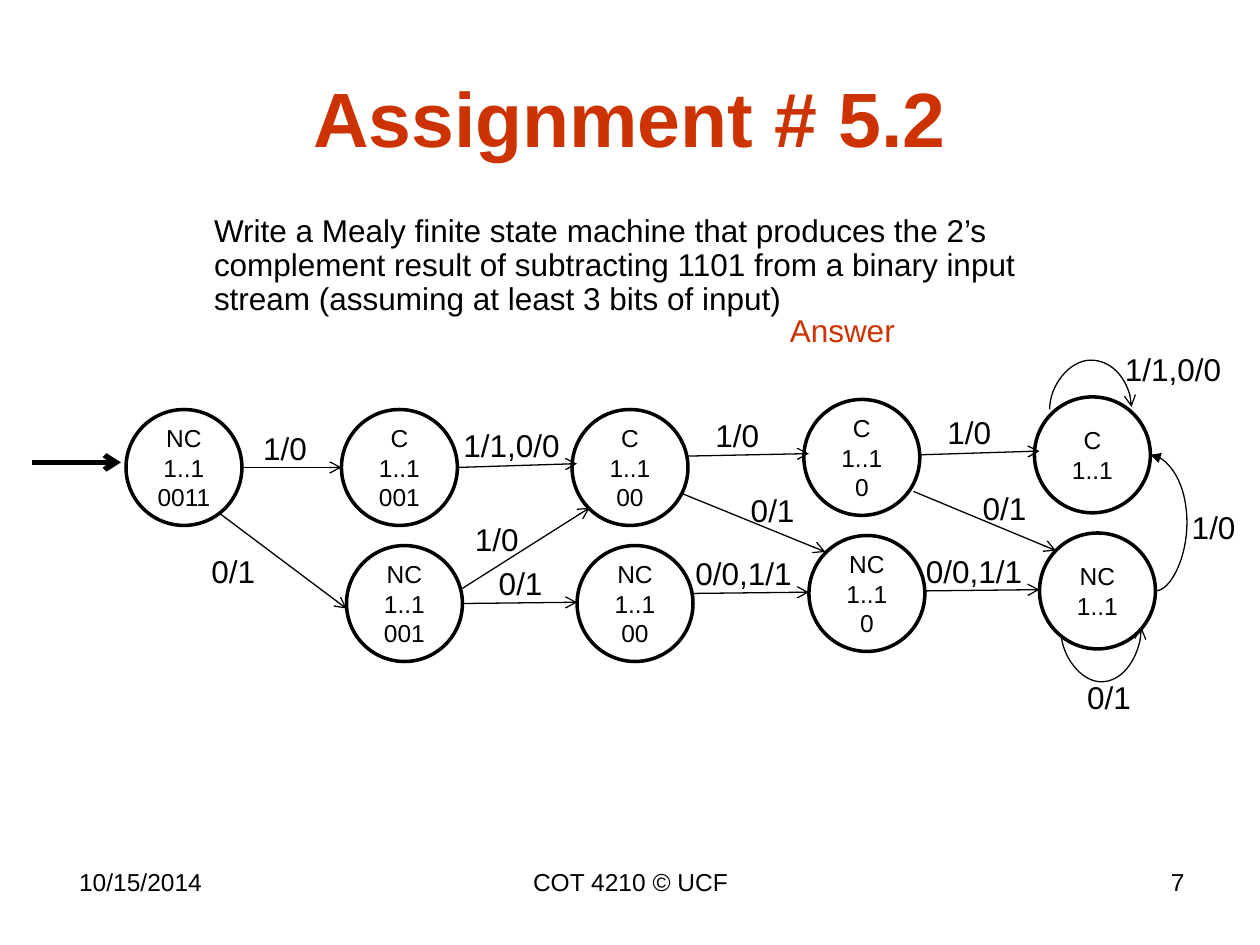
from dataclasses import dataclass

from lxml.etree import SubElement
from pptx import Presentation
from pptx.dml.color import RGBColor
from pptx.enum.shapes import MSO_CONNECTOR, MSO_SHAPE
from pptx.enum.text import MSO_ANCHOR, PP_ALIGN
from pptx.oxml.ns import qn
from pptx.util import Inches, Pt


@dataclass(frozen=True)
class Theme:
    font: str = "Arial"
    ink: RGBColor = RGBColor(0x00, 0x00, 0x00)
    accent: RGBColor = RGBColor(0xCC, 0x33, 0x00)
    paper: RGBColor = RGBColor(0xFF, 0xFF, 0xFF)
    title: int = 44
    body: int = 18
    small: int = 14


THEME = Theme()
NODE_SIZE = 0.92
LABEL_HEIGHT = 0.4

# Content: text boxes as (text, box, format)
TEXTS = [
    ("Assignment # 5.2", (0.5, 0.3, 9, 1.25),
     dict(size=THEME.title, color=THEME.accent, bold=True,
          align=PP_ALIGN.CENTER, anchor=MSO_ANCHOR.MIDDLE)),
    ("10/15/2014", (0.53, 6.83, 2.33, 0.52), dict(size=THEME.small)),
    ("COT 4210 © UCF", (3.42, 6.83, 3.17, 0.52),
     dict(size=THEME.small, align=PP_ALIGN.CENTER)),
    ("7", (7.17, 6.83, 2.33, 0.52),
     dict(size=THEME.small, align=PP_ALIGN.RIGHT)),
    ("Write a Mealy finite state machine that produces the 2’s complement "
     "result of subtracting 1101 from a binary input stream "
     "(assuming at least 3 bits of input)",
     (1.6, 1.66, 6.88, 1.22), dict(line_spacing=0.9)),
    ("Answer", (6.17, 2.42, 1.04, LABEL_HEIGHT),
     dict(color=THEME.accent, wrap=False)),
]

# States: (carry, remaining bits, left, top)
STATES = [
    ("NC", "0011", 1, 3.25),
    ("C", "001", 2.71, 3.25), ("NC", "001", 2.75, 4.33),
    ("C", "00", 4.54, 3.25), ("NC", "00", 4.58, 4.33),
    ("C", "0", 6.38, 3.17), ("NC", "0", 6.42, 4.25),
    ("C", "", 8.21, 3.15), ("NC", "", 8.25, 4.23),
]

# Straight transitions: (start, end)
TRANSITIONS = [
    ((1.92, 3.71), (2.71, 3.71)), ((1.75, 4.08), (2.75, 4.83)),
    ((3.67, 4.67), (4.68, 4.03)), ((3.63, 3.71), (4.58, 3.68)),
    ((3.67, 4.79), (4.58, 4.78)), ((5.42, 3.92), (6.55, 4.38)),
    ((5.46, 3.62), (6.42, 3.6)), ((5.5, 4.71), (6.42, 4.7)),
    ((7.25, 3.9), (8.38, 4.37)), ((7.29, 3.61), (8.25, 3.58)),
    ((7.33, 4.69), (8.25, 4.68)),
]
ENTRY = ((0.25, 3.67), (0.96, 3.67))

# Self loops: (start, end, height above the start)
LOOPS = [
    ((8.42, 5), (9.06, 4.98), -0.41),
    ((8.33, 3.25), (8.98, 3.23), 0.39),
]
RETURN_CURVE = ((9.17, 4.69), (9.13, 3.61), -0.25)

# Transition labels: (text, left, top, width)
LABELS = [
    ("1/0", 1.99, 3.36, 0.55), ("0/1", 1.58, 4.33, 0.55),
    ("1/0", 3.67, 4.08, 0.55), ("1/1,0/0", 3.58, 3.33, 1),
    ("0/1", 3.86, 4.43, 0.55), ("0/1", 5.86, 3.85, 0.55),
    ("1/0", 5.58, 3.25, 0.58), ("0/0,1/1", 5.42, 4.35, 0.97),
    ("0/1", 7.7, 3.83, 0.55), ("1/0", 7.42, 3.23, 0.58),
    ("0/0,1/1", 7.25, 4.33, 0.97), ("1/1,0/0", 8.83, 2.73, 1),
    ("0/1", 8.53, 5.33, 0.55), ("1/0", 9.36, 3.98, 0.55),
]


def write_text(shape, text, *, size=THEME.body, color=THEME.ink, bold=False,
               align=PP_ALIGN.LEFT, anchor=MSO_ANCHOR.TOP, wrap=True,
               line_spacing=None):
    frame = shape.text_frame
    frame.word_wrap = wrap
    frame.vertical_anchor = anchor
    frame.text = text
    for paragraph in frame.paragraphs:
        paragraph.alignment = align
        if line_spacing:
            paragraph.line_spacing = line_spacing
        for run in paragraph.runs:
            run.font.name = THEME.font
            run.font.size = Pt(size)
            run.font.bold = bold
            run.font.color.rgb = color


def add_text(slide, text, box, **text_format):
    shape = slide.shapes.add_textbox(*map(Inches, box))
    write_text(shape, text, **text_format)


def add_state(slide, carry, bits, left, top):
    shape = slide.shapes.add_shape(
        MSO_SHAPE.OVAL, *map(Inches, (left, top, NODE_SIZE, NODE_SIZE)))
    shape.shadow.inherit = False
    shape.fill.solid()
    shape.fill.fore_color.rgb = THEME.paper
    shape.line.color.rgb = THEME.ink
    shape.line.width = Pt(2)
    text = f"{carry}\v1..1" + (f"\n{bits}" if bits else "")
    write_text(shape, text, size=THEME.small, align=PP_ALIGN.CENTER,
               anchor=MSO_ANCHOR.MIDDLE, wrap=False)


def add_arrow(slide, start, end, *, kind=MSO_CONNECTOR.STRAIGHT, width=0.75,
              head="arrow"):
    connector = slide.shapes.add_connector(kind, *map(Inches, (*start, *end)))
    connector.line.color.rgb = THEME.ink
    connector.line.width = Pt(width)
    SubElement(connector.line._get_or_add_ln(), qn("a:tailEnd"), type=head)
    SubElement(connector._element.spPr, qn("a:effectLst"))
    return connector


def add_curve(slide, start, end, bulge, *, head="arrow"):
    """Draw a curve whose middle lies bulge inches along its own axis."""
    connector = add_arrow(slide, start, end, kind=MSO_CONNECTOR.CURVE, head=head)
    ratio = bulge / abs(start[0] - end[0])
    adjustments = connector._element.spPr.find(qn("a:prstGeom")).find(qn("a:avLst"))
    SubElement(adjustments, qn("a:gd"), name="adj1",
               fmla=f"val {round(ratio * 100000)}")
    return connector


def add_loop(slide, start, end, bulge):
    """Draw the curve on its side, then turn it a quarter about its centre."""
    center_x, center_y = (start[0] + end[0]) / 2, (start[1] + end[1]) / 2
    half_width, half_height = (start[1] - end[1]) / 2, (end[0] - start[0]) / 2
    connector = add_curve(
        slide, (center_x + half_width, center_y + half_height),
        (center_x - half_width, center_y - half_height), bulge)
    connector._element.spPr.find(qn("a:xfrm")).set("rot", str(90 * 60000))


def main():
    presentation = Presentation()
    presentation.slide_width, presentation.slide_height = Inches(10), Inches(7.5)
    slide = presentation.slides.add_slide(presentation.slide_layouts[6])

    # Title, task and footer
    for text, box, text_format in TEXTS:
        add_text(slide, text, box, **text_format)

    # State machine: loops lie behind the states
    for loop in LOOPS:
        add_loop(slide, *loop)
    for state in STATES:
        add_state(slide, *state)
    add_arrow(slide, *ENTRY, width=3)
    for start, end in TRANSITIONS:
        add_arrow(slide, start, end)
    add_curve(slide, *RETURN_CURVE, head="triangle")

    # Transition labels
    for text, left, top, width in LABELS:
        add_text(slide, text, (left, top, width, LABEL_HEIGHT), wrap=False)

    presentation.save("out.pptx")


if __name__ == "__main__":
    main()
